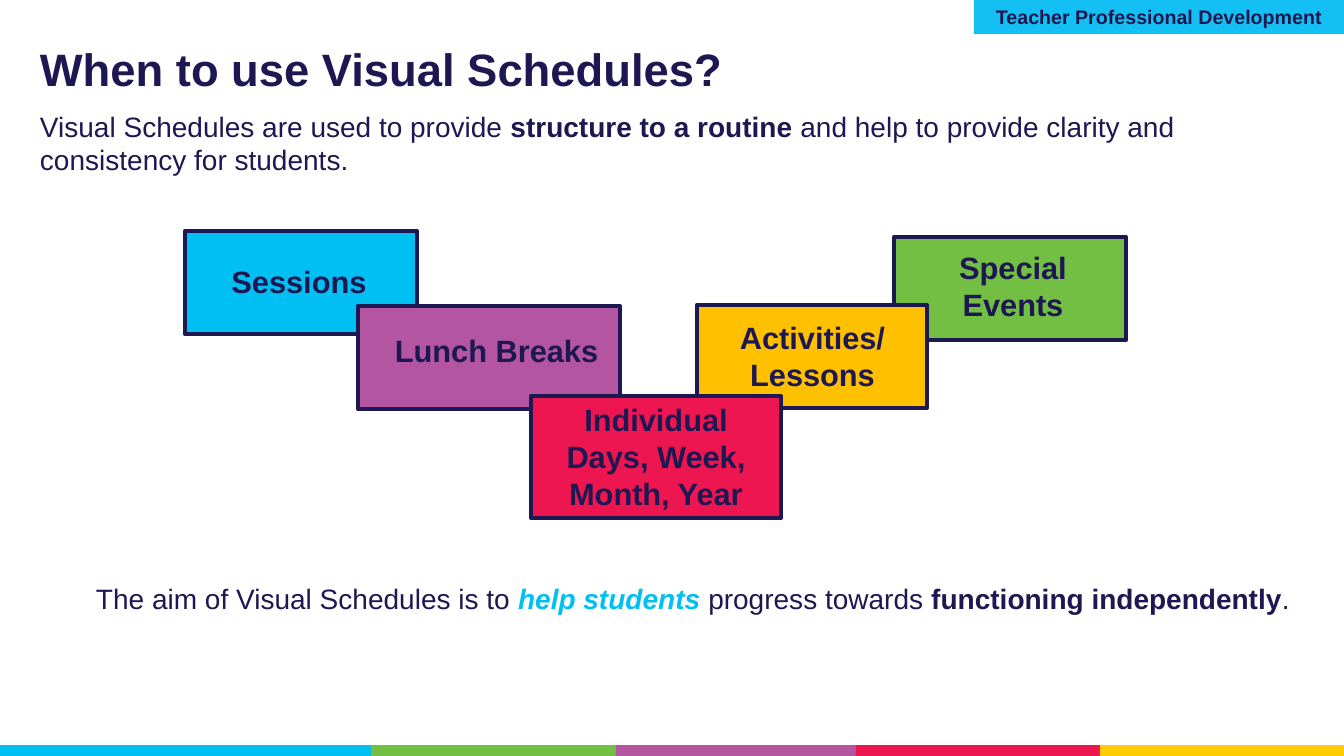
from pptx import Presentation, util as u
from pptx.dml.color import RGBColor
from pptx.enum import shapes, text

PX = 914400 / 100.8
NAVY = RGBColor(0x1D, 0x17, 0x52)
CYAN = RGBColor(0x00, 0xC0, 0xF3)
SKY = RGBColor(0x14, 0xC0, 0xF3)
GREEN = RGBColor(0x72, 0xBF, 0x44)
PURPLE = RGBColor(0xB4, 0x55, 0xA0)
ORCHID = RGBColor(0xB3, 0x55, 0xA0)
RED = RGBColor(0xED, 0x16, 0x51)
YELLOW = RGBColor(0xFF, 0xCB, 0x05)
AMBER = RGBColor(0xFF, 0xC0, 0x00)
LEFT, CENTER = text.PP_ALIGN.LEFT, text.PP_ALIGN.CENTER


def add_text(box, *runs, size=20, align=LEFT, spacing=None, inset=10, top=5):
    tb = s.shapes.add_textbox(*[round(v * PX) for v in box])
    tf = tb.text_frame
    tf.word_wrap = True
    tf.margin_left, tf.margin_top = round(inset * PX), round(top * PX)
    p = tf.paragraphs[0]
    p.alignment = align
    p.line_spacing = spacing
    for words, bold, italic, color in runs:
        r = p.add_run()
        r.text = words
        r.font.name, r.font.size = "Arial", u.Pt(size)
        r.font.bold, r.font.italic = bold, italic
        r.font.color.rgb = color


def add_rect(box, fill, outline=None):
    sp = s.shapes.add_shape(shapes.MSO_SHAPE.RECTANGLE, *[round(v * PX) for v in box])
    sp.shadow.inherit = False
    sp.fill.solid()
    sp.fill.fore_color.rgb = fill
    if outline:
        sp.line.color.rgb = outline
        sp.line.width = u.Pt(3)
    else:
        sp.line.fill.background()


prs = Presentation()
prs.slide_width, prs.slide_height = round(1344 * PX), round(756 * PX)
s = prs.slides.add_slide(prs.slide_layouts[6])

edges = [0, 371, 616, 856, 1100, 1344]
for x, end, color in zip(edges, edges[1:], [CYAN, GREEN, PURPLE, RED, YELLOW]):
    add_rect((x, 745, end - x, 11), color)

add_text((0, 47, 1265, 59), ("When to use Visual Schedules?", True, False, NAVY),
         size=32.4, spacing=0.9, inset=40, top=0)
add_text((86, 577, 1224, 44),
         ("The aim of Visual Schedules is to ", False, False, NAVY),
         ("help students ", True, True, CYAN),
         ("progress towards ", False, False, NAVY),
         ("functioning independently", True, False, NAVY),
         (".", False, False, NAVY))
add_text((30, 109, 1268, 73),
         ("Visual Schedules are used to provide ", False, False, NAVY),
         ("structure to a routine", True, False, NAVY),
         (" and help to provide clarity and consistency for students.", False, False, NAVY),
         top=0)

cards = [
    ("Sessions", CYAN, (185, 231, 232, 103), (202, 258, 194, 47), CENTER),
    ("Special Events", GREEN, (894, 237, 232, 103), (937, 244, 152, 85), CENTER),
    ("Lunch Breaks", ORCHID, (358, 306, 262, 103), (385, 327, 229, 85), LEFT),
    ("Activities/ Lessons", AMBER, (697, 305, 230, 103), (719, 314, 187, 85), CENTER),
    ("Individual Days, Week, Month, Year", RED, (531, 396, 250, 122), (531, 396, 250, 122), CENTER),
]
for label, color, card, label_box, align in cards:
    add_rect(card, color, outline=NAVY)
    add_text(label_box, (label, True, False, NAVY), size=22, align=align)

add_rect((974, 0, 370, 34), SKY)
add_text((974, 0, 370, 34), ("Teacher Professional Development", True, False, NAVY),
         size=14, align=CENTER)

prs.save("out.pptx")
